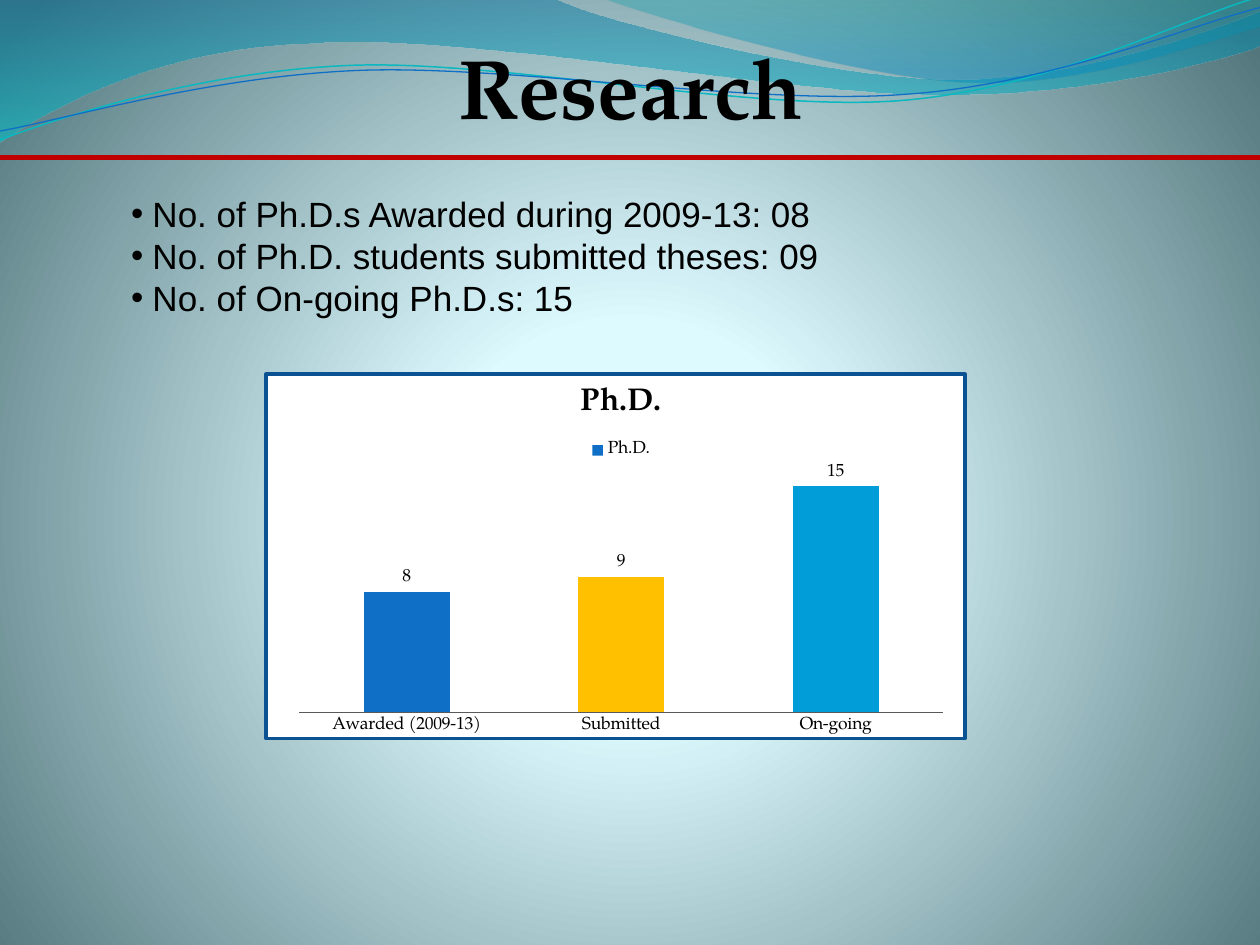
from pptx import Presentation
from pptx.chart.data import CategoryChartData
from pptx.dml.color import RGBColor
from pptx.enum.chart import (XL_CHART_TYPE as Kind, XL_LABEL_POSITION as Spot,
                             XL_LEGEND_POSITION as Side, XL_TICK_MARK as Tick)
from pptx.enum.shapes import MSO_CONNECTOR as Link, MSO_SHAPE as Shape
from pptx.enum.text import (MSO_ANCHOR as Anchor, MSO_AUTO_SIZE as Fit,
                            PP_ALIGN as Align)
from pptx.oxml import parse_xml
from pptx.oxml.ns import nsdecls, qn
from pptx.util import Inches, Pt

SERIF, SANS = "TeX Gyre Pagella", "Arial"


def color(code):
    return RGBColor.from_string(code)


def style(font, face, size, code="000000", bold=False):
    font.name, font.size, font.bold = face, Pt(size), bold
    font.color.rgb = color(code)


def write(para, text, align=Align.LEFT, **look):
    run = para.add_run()
    run.text = text
    para.alignment = align
    para.space_before = Pt(0)
    style(run.font, **look)


def grade(stops, path):
    """Gradient fill from (percent, colour, opacity) stops."""
    marks = "".join(
        f'<a:gs pos="{pos * 1000}"><a:srgbClr val="{code}">'
        f'<a:alpha val="{alpha * 1000}"/></a:srgbClr></a:gs>'
        for pos, code, alpha in stops)
    return parse_xml(f'<a:gradFill {nsdecls("a")} rotWithShape="1">'
                     f'<a:gsLst>{marks}</a:gsLst>{path}</a:gradFill>')


def swap(props, fill):
    """Put a gradient in place of the solid fill."""
    props.replace(props.find(qn("a:solidFill")), fill)


def paint(slide):
    fill = slide.background.fill
    fill.solid()
    fill.fore_color.rgb = color("DEFBFF")
    props = slide.background._cSld.bg.bgPr
    swap(props, grade(
        [(0, "DEFBFF", 100), (25, "DDFAFF", 100), (100, "52767C", 100)],
        '<a:path path="circle"><a:fillToRect l="10000" t="110000" '
        'r="10000" b="100000"/></a:path>'))


def draw(slide, start, steps, close):
    """Outline of lines (one pair a step) and Bezier curves (three pairs)."""
    pen = slide.shapes.build_freeform(*map(Inches, start))
    for step in steps:
        spots = [(Inches(x), Inches(y)) for x, y in zip(step[::2], step[1::2])]
        pen.add_line_segments(spots, close=False)
    if close:
        pen.add_line_segments([], close=True)
    shape = pen.convert_to_shape()
    shape.shadow.inherit = False
    lines = iter(list(shape._element.iter(qn("a:lnTo"))))
    for step in steps:
        group = [next(lines) for _ in step[::2]]
        if len(group) == 3:
            curve = parse_xml(f'<a:cubicBezTo {nsdecls("a")}/>')
            group[0].addprevious(curve)
            for line in group:
                curve.append(line[0])
                line.getparent().remove(line)
    return shape


def wave(slide, start, steps, stops):
    shape = draw(slide, start, steps, True)
    shape.line.fill.background()
    shape.fill.solid()
    swap(shape._element.spPr, grade(stops, '<a:lin ang="5400000" scaled="1"/>'))


def strand(slide, start, steps, code, width):
    shape = draw(slide, start, steps, False)
    shape.fill.background()
    shape.line.color.rgb = color(code)
    shape.line.width = Pt(width)


def waves(slide):
    wave(slide, (0, 0),
         [(4.4, -0.01), (4.76, 0.17, 6.64, 0.63, 7.58, 0.63),
          (8.53, 0.63, 9.58, 0.26, 10, 0.09), (10.01, 0.36),
          (9.83, 0.44, 8.7, 0.76, 7.46, 0.75),
          (6.22, 0.75, 3.82, 0.28, 2.57, 0.34),
          (1.29, 0.36, 0.46, 0.83, -0.01, 1.13), (0, 0)],
         [(0, "0074A1", 45), (100, "00C6CF", 55)])
    wave(slide, (4.79, -0.01),
         [(5.09, 0.11, 6.82, 0.62, 7.69, 0.65),
          (8.56, 0.69, 9.61, 0.32, 10, 0.21), (10, 0), (4.79, -0.01)],
         [(0, "00A1A9", 30), (80, "008BBF", 45)])
    strand(slide, (0, 1.11),
           [(0.48, 0.93, 1.58, 0.57, 2.77, 0.52),
            (3.95, 0.47, 5.93, 0.89, 7.13, 0.8),
            (8.33, 0.71, 9.38, 0.15, 9.98, -0.02)], "0AB8BF", 0.85)
    strand(slide, (0, 1.04),
           [(0.47, 0.96, 1.64, 0.61, 2.83, 0.56),
            (4.03, 0.51, 5.97, 0.84, 7.17, 0.75),
            (8.36, 0.67, 9.41, 0.21, 10, 0.06)], "0F6FC6", 0.75)


def place(holder, box):
    """Move a placeholder to the box and to the front."""
    holder.left, holder.top, holder.width, holder.height = map(Inches, box)
    tree = holder._element.getparent()
    tree.append(holder._element)
    frame = holder.text_frame
    frame.word_wrap = True
    frame.auto_size = Fit.SHAPE_TO_FIT_TEXT
    frame.vertical_anchor = Anchor.TOP
    return frame


def head(slide, box, text):
    frame = place(slide.shapes.title, box)
    write(frame.paragraphs[0], text, Align.CENTER, face=SERIF, size=48, bold=True)


def rule(slide, top, width):
    line = slide.shapes.add_connector(
        Link.STRAIGHT, 0, Inches(top), Inches(width), Inches(top))
    line.line.color.rgb = color("C00000")
    line.line.width = Pt(3)
    line._element.spPr.append(parse_xml(f'<a:effectLst {nsdecls("a")}/>'))


def points(slide, box, items):
    frame = place(slide.placeholders[1], box)
    for i, item in enumerate(items):
        para = frame.add_paragraph() if i else frame.paragraphs[0]
        write(para, item, face=SANS, size=20)
        props = para._p.get_or_add_pPr()
        props.set("marL", str(Inches(0.17)))
        props.set("indent", str(-Inches(0.17)))
        props.append(parse_xml(f'<a:buFont {nsdecls("a")} typeface="{SANS}"/>'))
        props.append(parse_xml(f'<a:buChar {nsdecls("a")} char="•"/>'))


def panel(slide, box):
    card = slide.shapes.add_shape(Shape.RECTANGLE, *map(Inches, box))
    card.shadow.inherit = False
    card.fill.solid()
    card.fill.fore_color.rgb = color("FFFFFF")
    card.line.color.rgb = color("0B5292")
    card.line.width = Pt(2)


def bars(slide, box, name, rows):
    data = CategoryChartData()
    data.categories = [label for label, _, _ in rows]
    data.add_series(name, [value for _, value, _ in rows])
    chart = slide.shapes.add_chart(
        Kind.COLUMN_CLUSTERED, *map(Inches, box), data).chart
    style(chart.font, SERIF, 10)

    chart.has_title = True
    write(chart.chart_title.text_frame.paragraphs[0], name, Align.CENTER,
          face=SERIF, size=18, bold=True)
    chart.has_legend = True
    chart.legend.position = Side.TOP
    chart.legend.include_in_layout = False

    axis = chart.value_axis
    axis.visible = axis.has_major_gridlines = False
    axis.minimum_scale, axis.maximum_scale = 0, 16
    base = chart.category_axis
    base.major_tick_mark = base.minor_tick_mark = Tick.NONE
    base.format.line.color.rgb = color("595959")

    plot = chart.plots[0]
    plot.vary_by_categories = False
    plot.gap_width, plot.overlap = 150, -25
    series = plot.series[0]
    series.data_labels.show_value = True
    series.data_labels.position = Spot.OUTSIDE_END
    parts = [series] + [series.points[i] for i in range(1, len(rows))]
    for part, (_, _, hue) in zip(parts, rows):
        part.format.fill.solid()
        part.format.fill.fore_color.rgb = color(hue)


def main():
    deck = Presentation()
    deck.slide_width, deck.slide_height = Inches(10), Inches(7.5)
    slide = deck.slides.add_slide(deck.slide_layouts[1])
    paint(slide)
    waves(slide)
    panel(slide, (2.11, 2.97, 5.55, 2.89))
    rule(slide, 1.25, 10)
    head(slide, (1.02, 0.23, 7.97, 0.91), "Research")
    bars(slide, (2.27, 2.89, 5.32, 3), "Ph.D.",
         [("Awarded (2009-13)", 8, "0F6FC6"), ("Submitted", 9, "FFC000"),
          ("On-going", 15, "009DD9")])
    points(slide, (0.94, 1.48, 8.44, 1.11),
           ["No. of Ph.D.s Awarded during 2009-13: 08",
            "No. of Ph.D. students submitted theses: 09",
            "No. of On-going Ph.D.s: 15"])
    deck.save("out.pptx")


if __name__ == "__main__":
    main()
